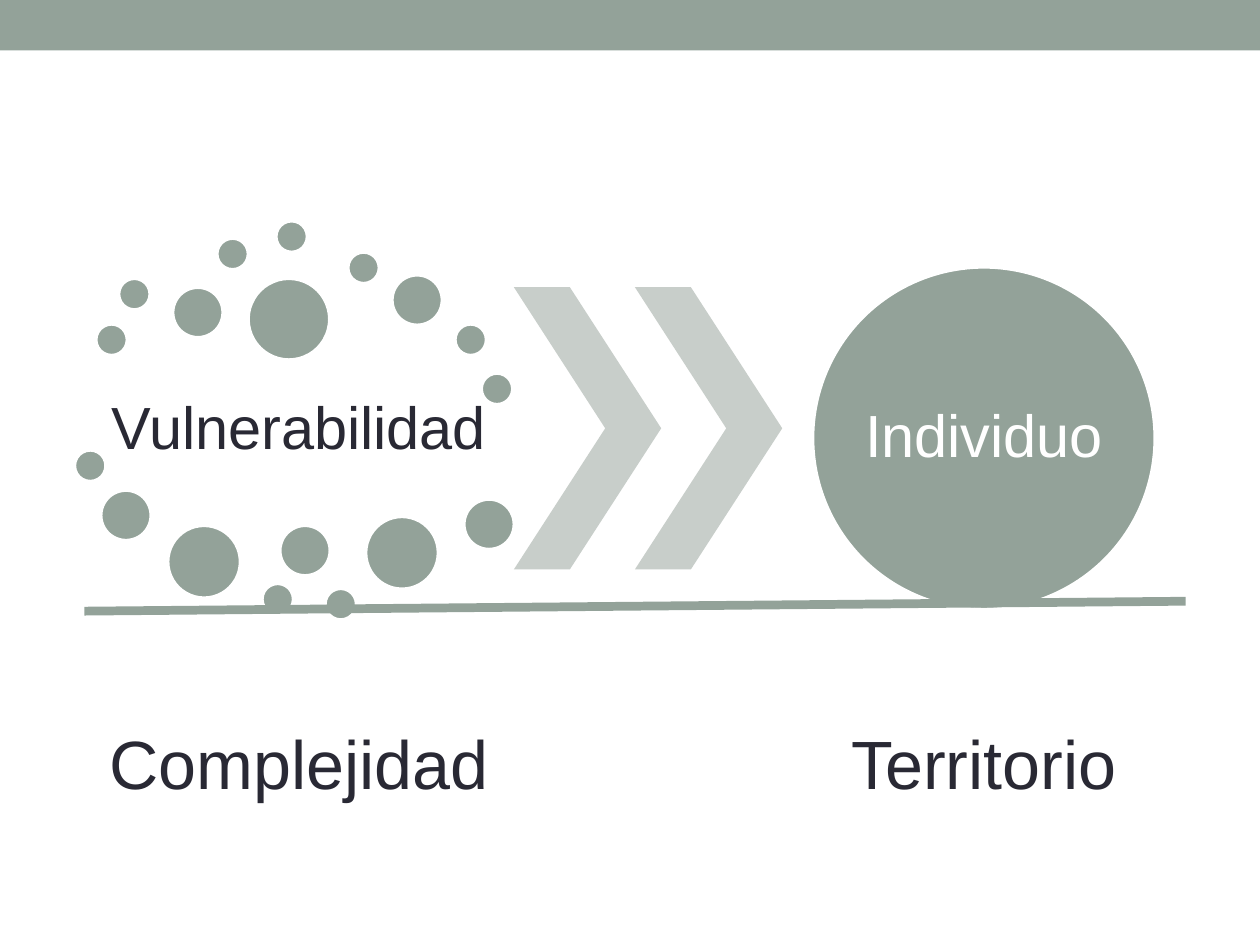
from pptx import Presentation
from pptx import util as u
from pptx.dml.color import RGBColor
from pptx.enum import shapes, text
from pptx.oxml.ns import qn
from lxml import etree

SAGE = RGBColor(0x93, 0xA2, 0x99)
PALE = RGBColor(0xC8, 0xCE, 0xCA)
DARK = RGBColor(0x29, 0x29, 0x34)
WHITE = RGBColor(0xFF, 0xFF, 0xFF)
MSO = shapes.MSO_SHAPE


def add_shape(kind, x, y, w, h, fill, outlined=False):
    sp = s.shapes.add_shape(kind, u.Cm(x), u.Cm(y), u.Cm(w), u.Cm(h))
    sp.shadow.inherit = False
    sp.fill.solid()
    sp.fill.fore_color.rgb = fill
    if outlined:
        sp.line.color.rgb = WHITE
        sp.line.width = u.Pt(2.08)
    else:
        sp.line.fill.background()
    return sp


def add_label(words, x, y, w, h, size, color, inset):
    tf = s.shapes.add_textbox(u.Cm(x), u.Cm(y), u.Cm(w), u.Cm(h)).text_frame
    tf.word_wrap = True
    tf.vertical_anchor = text.MSO_ANCHOR.MIDDLE
    tf.margin_left = tf.margin_right = tf.margin_top = tf.margin_bottom = u.Cm(inset)
    p = tf.paragraphs[0]
    p.text = words
    p.alignment = text.PP_ALIGN.CENTER
    p.line_spacing = 0.9
    p.font.name = "Arial"
    p.font.size = u.Pt(size)
    p.font.color.rgb = color


prs = Presentation()
prs.slide_width, prs.slide_height = u.Cm(25.4), u.Cm(19.05)
s = prs.slides.add_slide(prs.slide_layouts[6])

# Top band
add_shape(MSO.RECTANGLE, 0, 0, 25.4, 1.02, SAGE)

# Ring of dots: diameter -> top left corners
dots = {
    0.64: [(1.93, 6.53), (2.39, 5.61), (4.37, 4.8), (5.56, 4.45), (7.01, 5.08),
           (9.17, 6.53), (9.7, 7.52), (1.5, 9.07), (5.28, 11.76), (6.55, 11.86)],
    1.02: [(3.48, 5.79), (7.9, 5.54), (2.03, 9.88), (5.64, 10.59), (9.35, 10.06)],
    1.47: [(3.38, 10.59), (7.37, 10.41)],
    1.65: [(5, 5.61)],
}
for d, corners in dots.items():
    for x, y in corners:
        add_shape(MSO.OVAL, x, y, d, d, SAGE, outlined=True)

# Chevrons
for x in (10.36, 12.8):
    sp = add_shape(MSO.CHEVRON, x, 5.79, 2.97, 5.69, PALE)
    sp.adjustments[0] = 0.62

# Large circle
add_shape(MSO.OVAL, 16.38, 5.38, 6.91, 6.91, SAGE, outlined=True)

# Labels
add_label("Vulnerabilidad", 1.96, 7.34, 8.13, 2.67, 34, DARK, 0.12)
add_label("Individuo", 17.4, 6.4, 4.88, 4.88, 34, WHITE, 0)
for words, x in (("Complejidad", 1.96), ("Territorio", 15.77)):
    add_label(words, x, 12.98, 8.13, 5, 39, DARK, 0.12)

# Ground line
line = s.shapes.add_connector(shapes.MSO_CONNECTOR.STRAIGHT,
                              u.Cm(1.7), u.Cm(12.32), u.Cm(23.9), u.Cm(12.12))
line.line.color.rgb = SAGE
line.line.width = u.Pt(5)
etree.SubElement(line._element.spPr, qn("a:effectLst"))

prs.save("out.pptx")
